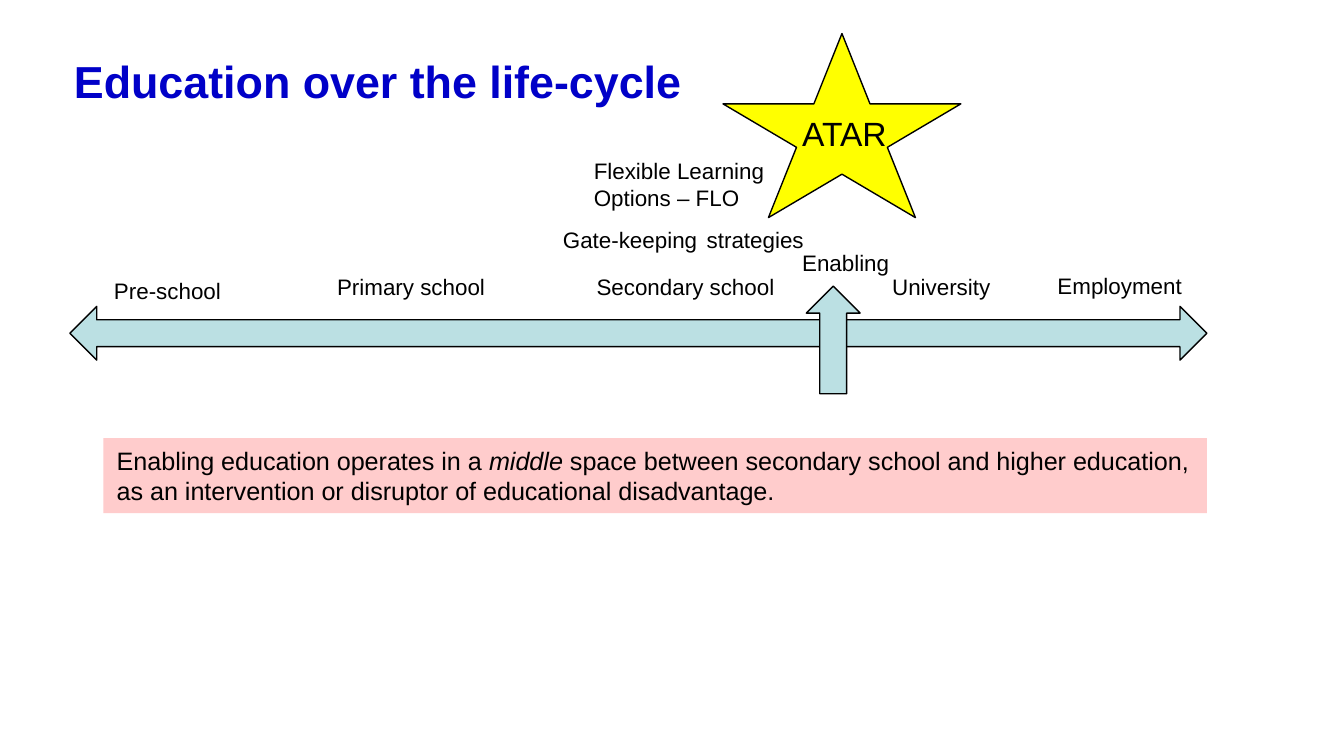
from pptx import Presentation
from pptx.dml.color import RGBColor
from pptx.enum import shapes, text
from pptx.util import Inches, Pt

THEME = {
    "font": "Arial",
    "title": "0000C8", "ink": "000000",
    "star": "FFFF00", "arrow": "BBE0E3", "note": "FFCCCC",
    "title_size": 24, "large": 18, "note_size": 13.5, "label": 12,
    "outline": 0.75,
}

SLIDE_WIDTH = 10
SLIDE_HEIGHT = SLIDE_WIDTH * 9 / 16

TITLE = "Education over the life-cycle"
TITLE_BOX = (0.45, 0.35, 9.03, 0.53)

# A run is a string or a (string, format) pair.
WIDE_SPACE = (" ", {"size": THEME["large"]})
LABELS = [
    ((0.75, 1.93, 1.06, 0.4), ["Pre-school", WIDE_SPACE]),
    ((2.41, 1.98, 1.36, 0.3), ["Primary school"]),
    ((4.34, 1.98, 2.32, 0.3), ["Secondary school"]),
    ((6.54, 1.98, 1.36, 0.3), ["University"]),
    ((7.77, 1.89, 1.56, 0.4), ["Employment", WIDE_SPACE]),
    ((5.87, 1.72, 1.06, 0.4), ["Enabling", WIDE_SPACE]),
    ((4.09, 1.55, 2.23, 0.4), ["Gate-keeping", WIDE_SPACE, "strategies", WIDE_SPACE]),
    ((4.32, 1.12, 1.76, 0.5), ["Flexible Learning Options – FLO"]),
    ((5.87, 0.79, 1.06, 0.4), [("ATAR", {"size": THEME["large"]})]),
]

SHAPE = shapes.MSO_SHAPE
FIGURES = [
    (SHAPE.STAR_5_POINT, (5.38, 0.25, 1.77, 1.37), "star"),
    (SHAPE.LEFT_RIGHT_ARROW, (0.52, 2.28, 8.46, 0.4), "arrow"),
    (SHAPE.UP_ARROW, (6, 2.13, 0.4, 0.8), "arrow"),
]

NOTE_BOX = (0.77, 3.26, 8.21, 0.56)
NOTE = [
    "Enabling education operates in a ",
    ("middle", {"italic": True}),
    " space between secondary school and higher education, "
    "as an intervention or disruptor of educational disadvantage.",
]


def inches(box):
    return [Inches(length) for length in box]


def write(shape, runs, size=THEME["label"], color="ink", bold=False,
          anchor=text.MSO_ANCHOR.TOP):
    frame = shape.text_frame
    frame.word_wrap = True
    frame.auto_size = text.MSO_AUTO_SIZE.NONE
    frame.vertical_anchor = anchor
    paragraph = frame.paragraphs[0]
    paragraph.alignment = text.PP_ALIGN.LEFT
    paragraph.space_before = Pt(0)
    for item in runs:
        words, style = (item, {}) if isinstance(item, str) else item
        run = paragraph.add_run()
        run.text = words
        run.font.name = THEME["font"]
        run.font.size = Pt(style.get("size", size))
        run.font.bold = bold
        run.font.italic = style.get("italic", False)
        run.font.color.rgb = RGBColor.from_string(THEME[color])


def add_figure(slide, kind, box, fill, outlined=True):
    figure = slide.shapes.add_shape(kind, *inches(box))
    figure.shadow.inherit = False
    figure.fill.solid()
    figure.fill.fore_color.rgb = RGBColor.from_string(THEME[fill])
    if outlined:
        figure.line.color.rgb = RGBColor.from_string(THEME["ink"])
        figure.line.width = Pt(THEME["outline"])
    else:
        figure.line.fill.background()
    return figure


def main():
    deck = Presentation()
    deck.slide_width, deck.slide_height = inches((SLIDE_WIDTH, SLIDE_HEIGHT))
    slide = deck.slides.add_slide(deck.slide_layouts.get_by_name("Title Only"))

    title = slide.shapes.title
    title.left, title.top, title.width, title.height = inches(TITLE_BOX)
    write(title, [TITLE], size=THEME["title_size"], color="title", bold=True)

    for kind, box, fill in FIGURES:
        add_figure(slide, kind, box, fill)

    note = add_figure(slide, SHAPE.RECTANGLE, NOTE_BOX, "note", outlined=False)
    write(note, NOTE, size=THEME["note_size"], anchor=text.MSO_ANCHOR.MIDDLE)

    for box, runs in LABELS:
        write(slide.shapes.add_textbox(*inches(box)), runs)

    deck.save("out.pptx")


if __name__ == "__main__":
    main()
